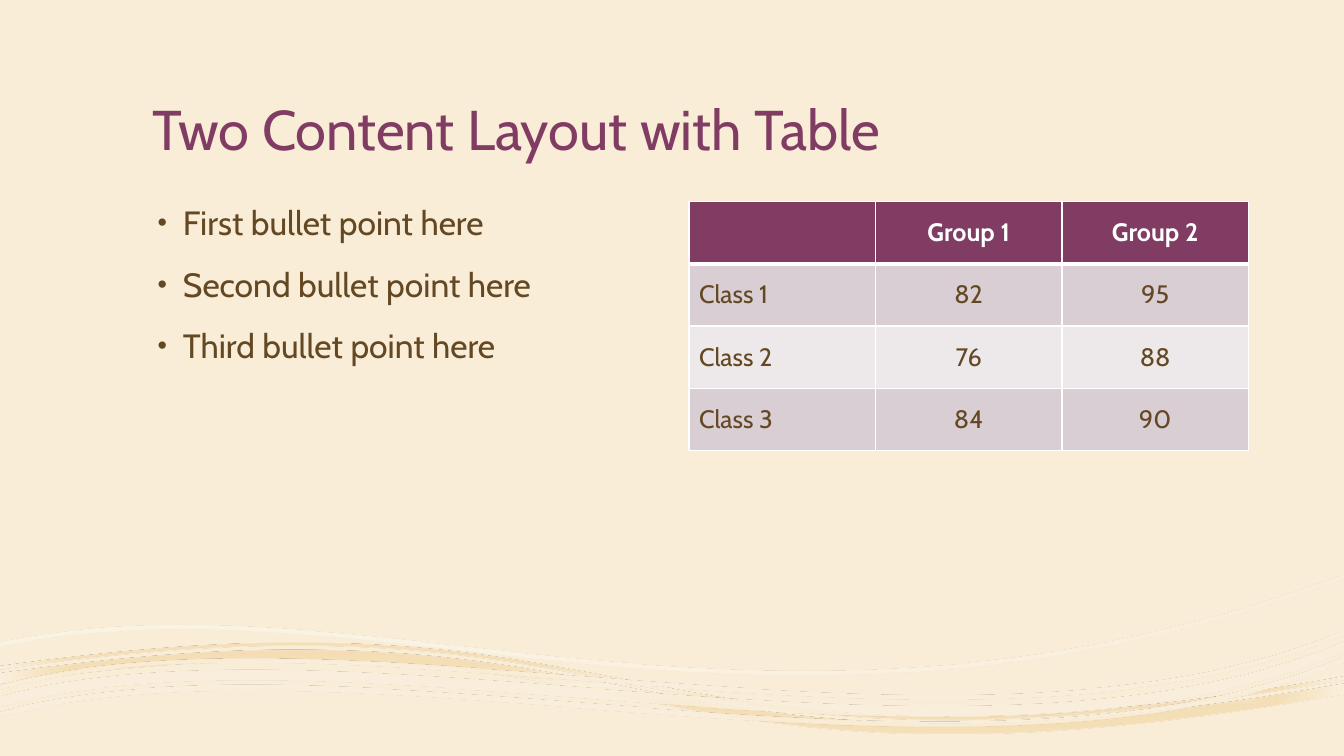
from math import cos, radians, sin

from lxml import etree
from pptx import Presentation
from pptx.dml.color import RGBColor
from pptx.enum.text import MSO_ANCHOR, MSO_AUTO_SIZE, PP_ALIGN
from pptx.oxml.ns import qn
from pptx.util import Inches, Pt

LEFT, CENTER = PP_ALIGN.LEFT, PP_ALIGN.CENTER
TOP, MIDDLE, BOTTOM = MSO_ANCHOR.TOP, MSO_ANCHOR.MIDDLE, MSO_ANCHOR.BOTTOM
NO_FIT = MSO_AUTO_SIZE.NONE

SLIDE_W, SLIDE_H = Inches(13.333), Inches(7.5)
FONT = "Cabin"
TILT = 3.5
COLORS = {
    "sand": "F9EDD7", "plum": "803C63", "brown": "634823", "white": "FFFFFF",
    "band_dark": "D8CED3", "band_light": "EDE8EA",
    "cream": "FAF1DF", "honey": "F4DEB7", "gold": "F4DDB3", "pale": "FAEFDC",
}

BULLETS = ["First bullet point here", "Second bullet point here",
           "Third bullet point here"]
SCORES = [["", "Group 1", "Group 2"],
          ["Class 1", "82", "95"],
          ["Class 2", "76", "88"],
          ["Class 3", "84", "90"]]

# Edges are Bezier chains in inches: a start, then three points per curve.
# Each ribbon is (shift, thickness); each stop is (position, colour, opacity).
GOLD_WAVE = {
    "box": (0.01, 6.12, 13.31, 1.35),
    "top": [(0, 6.68), (1.24, 6.51), (2.22, 6.44), (3.06, 6.45),
            (6.7, 6.47), (7.38, 7.82), (13.33, 6.78)],
    "bottom": [(13.33, 6.78), (6.02, 8.06), (6.67, 5.73), (0, 6.68)],
    "ribbons": [(0, 0.1), (-0.07, 0.03)],
    "stops": [(0, "cream", 90), (18, "honey", 100), (37, "gold", 90),
              (100, "cream", 100)],
    "focus": ("shape", (50, 50, 50, 50)),
}
HIGH_EDGE = [(0, 6.37), (3.73, 5.59), (7.54, 7.84), (13.33, 5.7)]
HIGH_WAVE = {
    "box": (0.03, 5.88, 13.35, 1.71),
    "top": HIGH_EDGE, "bottom": HIGH_EDGE[::-1],
    "ribbons": [(0, 0.04)],
    "stops": [(36, "white", 30), (100, "sand", 48)],
    "focus": None,
}
LOW_EDGE = [(0, 7.06), (3.49, 6.12), (9.55, 8.1), (13.33, 6.52)]
LOW_WAVE = {
    "box": (-0.01, 6.25, 13.36, 1.15),
    "top": LOW_EDGE, "bottom": LOW_EDGE[::-1],
    "ribbons": [(0, 0.05), (-0.15, 0.1), (-0.26, 0.04)],
    "stops": [(36, "white", 47), (100, "pale", 82)],
    "focus": ("rect", (100, 100, 0, 0)),
}


def rgb(name):
    return RGBColor.from_string(COLORS[name])


def area(left, top, width, height):
    """Turn percentages of the slide's size into a box in EMU."""
    return (round(SLIDE_W * left / 100), round(SLIDE_H * top / 100),
            round(SLIDE_W * width / 100), round(SLIDE_H * height / 100))


def add_node(parent, tag, **attributes):
    node = etree.SubElement(parent, qn(tag))
    for key, value in attributes.items():
        node.set(key, str(value))
    return node


def format_text(para, size, color, align=LEFT, bold=False):
    para.alignment = align
    for span in para.runs:
        span.font.name = FONT
        span.font.size = Pt(size)
        span.font.bold = bold
        span.font.color.rgb = rgb(color)


def level_edge(edge, shift, box):
    """Move an edge down and turn it so that the tilted shape restores it."""
    left, top, width, height = box
    middle_x, middle_y = left + width / 2, top + height / 2
    turn = radians(TILT)
    points = []
    for x, y in edge:
        dx, dy = x - middle_x, y + shift - middle_y
        points.append((Inches(middle_x + dx * cos(turn) - dy * sin(turn)),
                       Inches(middle_y + dx * sin(turn) + dy * cos(turn))))
    return points


def bend_lines(outline, curve_counts):
    """Merge each three line segments into a curve, edge by edge."""
    for start in list(outline.iter(qn("a:moveTo"))):
        line = start.getnext()
        for edge, count in enumerate(curve_counts):
            if edge:
                line = line.getnext()
            for _ in range(count):
                line.tag = qn("a:cubicBezTo")
                for _ in range(2):
                    line.append(line.getnext()[0])
                    line.getparent().remove(line.getnext())
                line = line.getnext()


def set_gradient(shape, stops, focus):
    """Fill with translucent stops, linear at 45 degrees without a focus."""
    shape.fill.gradient()
    gradient = shape.fill._xPr.find(qn("a:gradFill"))
    for child in list(gradient):
        gradient.remove(child)
    gradient.set("rotWithShape", "1")
    stop_list = add_node(gradient, "a:gsLst")
    for position, color, opacity in stops:
        stop = add_node(stop_list, "a:gs", pos=position * 1000)
        tint = add_node(stop, "a:srgbClr", val=COLORS[color])
        add_node(tint, "a:alpha", val=opacity * 1000)
    if focus is None:
        add_node(gradient, "a:lin", ang=45 * 60000, scaled=0)
        return
    kind, edges = focus
    center = add_node(gradient, "a:path", path=kind)
    sides = {side: edge * 1000 for side, edge in zip("ltrb", edges)}
    add_node(center, "a:fillToRect", **sides)


def add_wave(page, wave):
    builder = None
    for shift, thickness in wave["ribbons"]:
        points = (level_edge(wave["top"], shift, wave["box"])
                  + level_edge(wave["bottom"], shift + thickness, wave["box"]))
        if builder is None:
            builder = page.shapes.build_freeform(*points[0], scale=1.0)
        else:
            builder.move_to(*points[0])
        builder.add_line_segments(points[1:], close=True)
    shape = builder.convert_to_shape()
    left, top, width, height = (Inches(length) for length in wave["box"])
    outline = next(shape._element.iter(qn("a:path")))
    bend_lines(outline, [len(wave[edge]) // 3 for edge in ("top", "bottom")])
    for point in outline.iter(qn("a:pt")):
        point.set("x", str(int(point.get("x")) + shape.left - left))
        point.set("y", str(int(point.get("y")) + shape.top - top))
    outline.set("w", str(width))
    outline.set("h", str(height))
    shape.left, shape.top, shape.width, shape.height = left, top, width, height
    shape.rotation = 360 - TILT
    shape.shadow.inherit = False
    shape.line.fill.background()
    set_gradient(shape, wave["stops"], wave["focus"])


def set_title(page, text):
    title = page.shapes.title
    title.left, title.top, title.width, title.height = area(
        10.62, 4.44, 78.75, 17.78)
    frame = title.text_frame
    frame.text = text
    frame.auto_size = NO_FIT
    frame.vertical_anchor = BOTTOM
    frame.paragraphs[0].line_spacing = 0.9
    format_text(frame.paragraphs[0], 40, "plum")


def add_bullets(page, lines):
    box = page.shapes.add_textbox(*area(10.62, 26.67, 38.1, 57.78))
    frame = box.text_frame
    frame.word_wrap = True
    frame.vertical_anchor = TOP
    frame.text = "\n".join(lines)
    for para in frame.paragraphs:
        para.line_spacing = 0.9
        para.space_before = Pt(18)
        format_text(para, 24, "brown")
        settings = para._p.get_or_add_pPr()
        settings.set("marL", str(Inches(0.3)))
        settings.set("indent", str(Inches(-0.25)))
        add_node(settings, "a:buSzPct", val=80000)
        add_node(settings, "a:buFont", typeface="Arial")
        add_node(settings, "a:buChar", char="•")


def set_borders(cell, top, bottom):
    settings = cell._tc.get_or_add_tcPr()
    widths = {"a:lnL": 1, "a:lnR": 1, "a:lnT": top, "a:lnB": bottom}
    for tag, width in widths.items():
        line = add_node(settings, tag, w=Pt(width))
        add_node(add_node(line, "a:solidFill"), "a:srgbClr", val=COLORS["white"])


def add_score_table(page, rows):
    table = page.shapes.add_table(len(rows), len(rows[0]),
                                  *area(51.26, 26.67, 41.63, 32.93)).table
    for r, row in enumerate(rows):
        header = r == 0
        fill = "plum" if header else ("band_light", "band_dark")[r % 2]
        for c, text in enumerate(row):
            cell = table.cell(r, c)
            set_borders(cell, top=3 if r == 1 else 1, bottom=3 if header else 1)
            cell.fill.solid()
            cell.fill.fore_color.rgb = rgb(fill)
            cell.vertical_anchor = MIDDLE
            cell.text_frame.text = text
            format_text(cell.text_frame.paragraphs[0], 18,
                        "white" if header else "brown",
                        CENTER if c else LEFT, header)


def main():
    deck = Presentation()
    deck.slide_width, deck.slide_height = SLIDE_W, SLIDE_H
    page = deck.slides.add_slide(deck.slide_layouts.get_by_name("Title Only"))
    page.background.fill.solid()
    page.background.fill.fore_color.rgb = rgb("sand")
    for wave in (GOLD_WAVE, HIGH_WAVE, LOW_WAVE):
        add_wave(page, wave)
    set_title(page, "Two Content Layout with Table")
    add_bullets(page, BULLETS)
    add_score_table(page, SCORES)
    deck.save("out.pptx")


if __name__ == "__main__":
    main()
